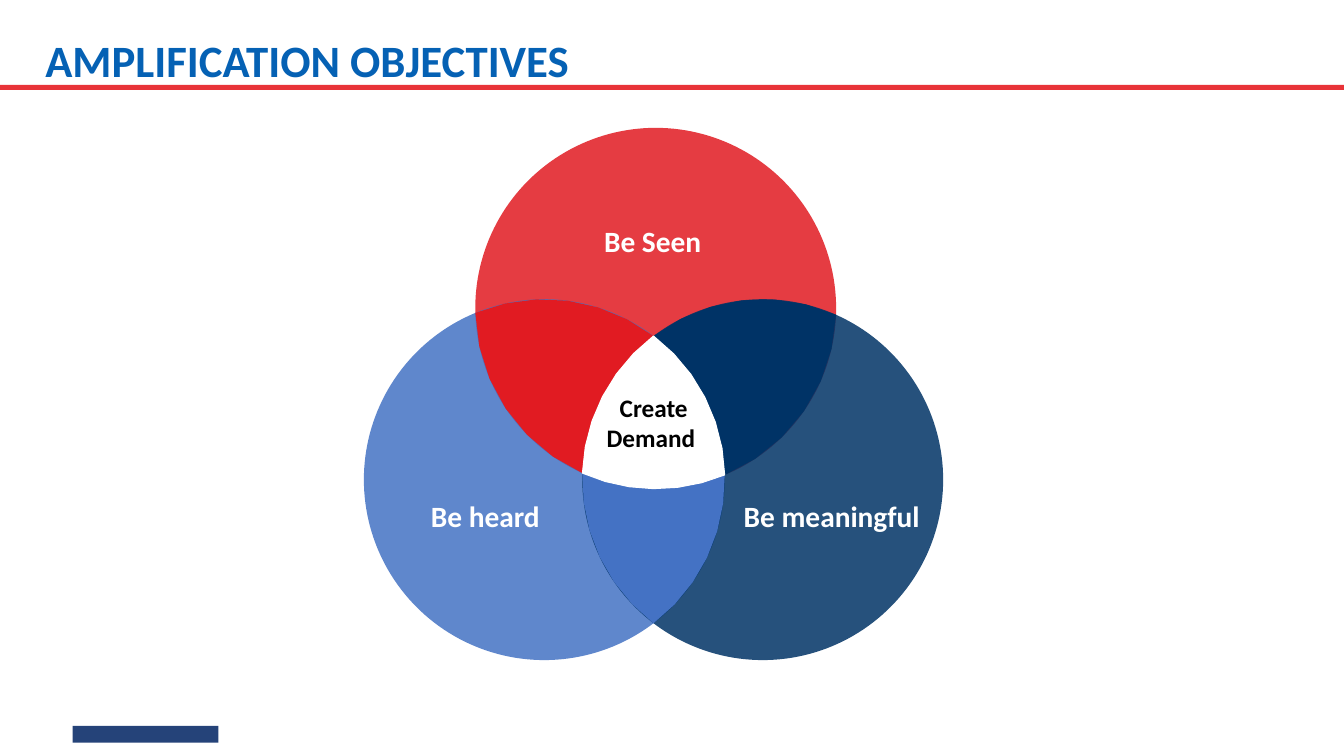
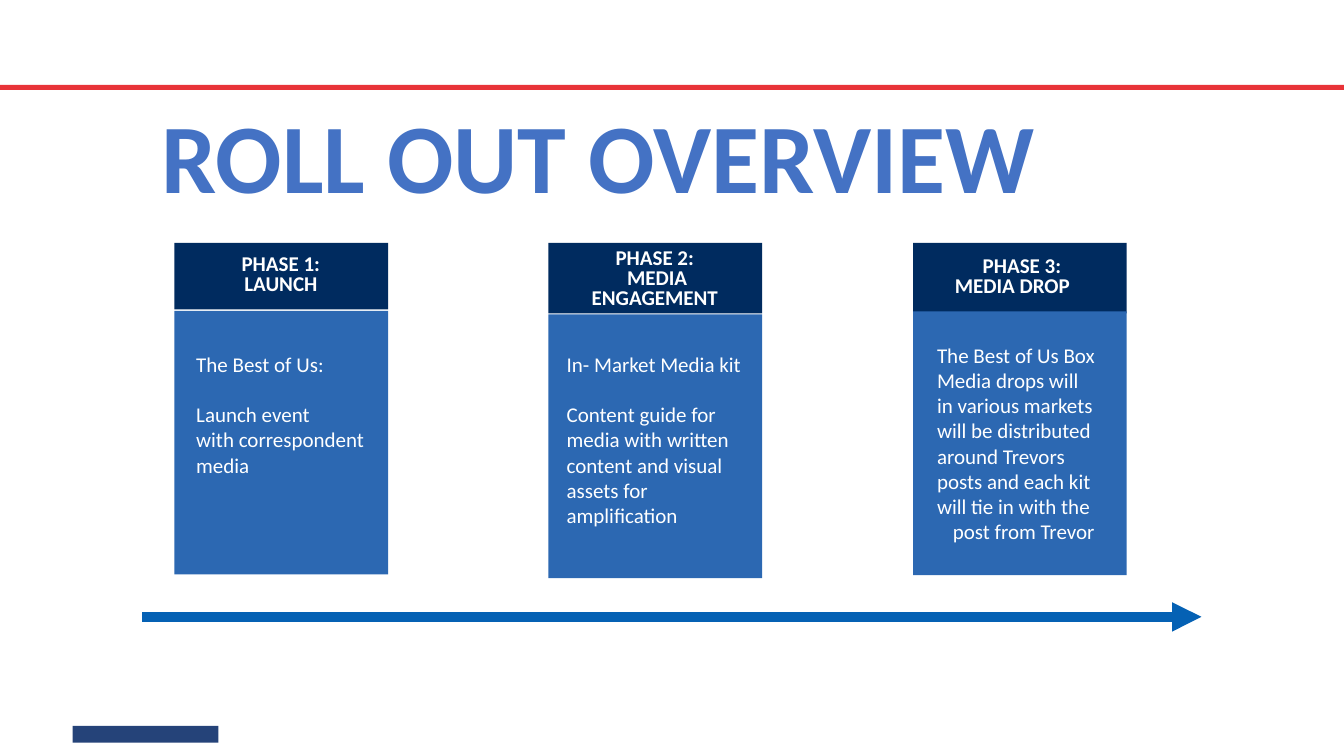
from itertools import combinations
from math import atan2, cos, dist, hypot, pi, sin

from lxml.etree import SubElement
from pptx import Presentation
from pptx.dml.color import RGBColor
from pptx.enum.shapes import MSO_CONNECTOR, MSO_SHAPE
from pptx.enum.text import MSO_ANCHOR, MSO_AUTO_SIZE, PP_ALIGN
from pptx.oxml.ns import qn
from pptx.util import Emu, Pt

# Grid: 160 columns by 90 rows of square cells, 12 to the inch
COLS, ROWS = 160, 90
CELL = 76200

FONT = "Calibri"
WHITE = RGBColor(0xFF, 0xFF, 0xFF)
BLACK = RGBColor(0, 0, 0)
BLUE = RGBColor(0x05, 0x61, 0xB4)
SKY = RGBColor(0x44, 0x72, 0xC4)
RED = RGBColor(0xE1, 0x1B, 0x22)
DEEP = RGBColor(0x00, 0x33, 0x66)
NAVY = RGBColor(0x00, 0x2B, 0x5F)
PANEL = RGBColor(0x2C, 0x68, 0xB2)
BAND = RGBColor(0xE8, 0x33, 0x38)
FOOT = RGBColor(0x25, 0x43, 0x79)

# Three circles of the diagram: centre and colour
RADIUS = 21.48
TOP, LEFT, RIGHT = (78.06, 36.7), (64.8, 57.1), (90.8, 57.1)
RINGS = [(TOP, RED), (LEFT, SKY), (RIGHT, DEEP)]
OVERLAP = {(TOP, LEFT): RED, (TOP, RIGHT): DEEP, (LEFT, RIGHT): SKY}

LABELS = [
    ("Be meaningful", (86.3, 58.8, 25.44, 5.16), 21, WHITE),
    ("Be Seen", (67.8, 26.06, 19.8, 5.16), 21, WHITE),
    ("Be heard", (45.84, 58.8, 23.88, 5.16), 21, WHITE),
    ("Create Demand ", (71.28, 46.2, 13.08, 8.16), 18, BLACK),
]

# Phase cards: left, head height, body top, head text top, head, note box, note.
# A line may carry its own left indent, right indent and space before.
WIDE, CARD_TOP, CARD_H = 25.44, 28.92, 31.4
PHASES = [
    (20.76, 7.92, 37, 30.18, ["PHASE 1: ", "LAUNCH "],
     (23, 41.46, 21.12, 18),
     ["The Best of Us:",
      ("Launch event\vwith correspondent media", {"before": 18})]),
    (65.28, 8.4, 37.44, 29.4, ["PHASE 2: ", "MEDIA\vENGAGEMENT "],
     (67.1, 41.46, 23.28, 26.4),
     ["In- Market Media kit",
      ("Content guide for media with written content and visual assets "
       "for amplification", {"before": 18})]),
    (108.7, 8.4, 37.08, 30.42,
     ["PHASE 3:", ("MEDIA DROP", {"right": 2.28})],
     (111.2, 40.4, 21.12, 21.6),
     ["The Best of Us Box",
      "Media drops will\vin various markets will be distributed around "
      "Trevors posts and each kit will tie in with the",
      ("post from Trevor", {"left": 1.88})]),
]


def grid(*cells):
    return [Emu(round(n * CELL)) for n in cells]


def place(shape, at):
    shape.left, shape.top, shape.width, shape.height = grid(*at)
    return shape


def paint(shape, fill, line=None, alpha=None):
    """Flat fill, with an optional outline and opacity in percent."""
    shape.shadow.inherit = False
    shape.fill.solid()
    shape.fill.fore_color.rgb = fill
    if alpha:
        tint = shape.element.spPr.find(".//" + qn("a:srgbClr"))
        SubElement(tint, qn("a:alpha"), val=str(alpha * 1000))
    if line:
        shape.line.color.rgb = line
        shape.line.width = Pt(0.75)
    else:
        shape.line.fill.background()
    return shape


def block(slide, kind, at, fill, alpha=None):
    return paint(slide.shapes.add_shape(kind, *grid(*at)), fill, alpha=alpha)


def text(shape, lines, size, color=WHITE, bold=False, align=PP_ALIGN.LEFT,
         anchor=MSO_ANCHOR.TOP, inset=0.36, space=1.0):
    """Fill a text box or placeholder with formatted paragraphs."""
    frame = shape.text_frame
    frame.word_wrap = True
    frame.auto_size = MSO_AUTO_SIZE.NONE
    frame.vertical_anchor = anchor
    (frame.margin_left, frame.margin_top,
     frame.margin_right, frame.margin_bottom) = grid(*[inset] * 4)
    for i, line in enumerate(lines):
        words, opts = (line, {}) if isinstance(line, str) else line
        para = frame.paragraphs[0] if i == 0 else frame.add_paragraph()
        para.text = words
        para.alignment = align
        para.line_spacing = space
        para.space_before = Pt(opts.get("before", 0))
        for side, key in (("left", "marL"), ("right", "marR")):
            if side in opts:
                para._p.get_or_add_pPr().set(key, str(grid(opts[side])[0]))
        for run in para.runs:
            font = run.font
            font.name, font.size, font.bold = FONT, Pt(size), bold
            font.color.rgb = color


def label(slide, at, lines, size, **fmt):
    text(slide.shapes.add_textbox(*grid(*at)), lines, size, **fmt)


def title(slide, words, at, size, color, space=1.0):
    text(place(slide.shapes.title, at), [words], size, color=color, bold=True,
         anchor=MSO_ANCHOR.MIDDLE, space=space)


def arrow(slide, x1, x2, y):
    line = slide.shapes.add_connector(
        MSO_CONNECTOR.STRAIGHT, *grid(x1, y, x2, y))
    line.line.color.rgb = BLUE
    line.line.width = Pt(7)
    SubElement(line.line._get_or_add_ln(), qn("a:tailEnd"), type="triangle")
    SubElement(line.element.spPr, qn("a:effectLst"))


def dress(deck, slide):
    """Move the red band and the footer bar to the master."""
    tree = deck.slide_master.shapes.element
    for at, fill in (((8.64, 86.4, 17.36, 2), FOOT),
                     ((0, 10.1, COLS, 0.6), BAND)):
        tree.append(block(slide, MSO_SHAPE.RECTANGLE, at, fill).element)


# Geometry of the overlaps
def cross(a, b, third):
    """Meeting points of two circles: the one nearer the third comes first."""
    dx, dy = b[0] - a[0], b[1] - a[1]
    gap = hypot(dx, dy)
    rise = (RADIUS ** 2 - gap ** 2 / 4) ** 0.5 / gap
    mid = (a[0] + b[0]) / 2, (a[1] + b[1]) / 2
    spots = [(mid[0] - s * rise * dy, mid[1] + s * rise * dx) for s in (1, -1)]
    return sorted(spots, key=lambda spot: dist(spot, third))


def arc(mid, start, end, steps=6):
    """Points on the shorter arc from start up to, but without, end."""
    first, last = (atan2(p[1] - mid[1], p[0] - mid[0]) for p in (start, end))
    turn = (last - first + pi) % (2 * pi) - pi
    for i in range(steps):
        angle = first + turn * i / steps
        yield mid[0] + RADIUS * cos(angle), mid[1] + RADIUS * sin(angle)


def region(slide, spots, mids, fill, line=None):
    """Closed outline of arcs through the spots, one centre for each arc."""
    ends = spots[1:] + spots[:1]
    points = [grid(*p) for m, s, e in zip(mids, spots, ends)
              for p in arc(m, s, e)]
    pen = slide.shapes.build_freeform(*points[0])
    pen.add_line_segments(points[1:], close=True)
    paint(pen.convert_to_shape(), fill, line)


def venn(slide):
    for (x, y), fill in RINGS:
        block(slide, MSO_SHAPE.OVAL,
              (x - RADIUS, y - RADIUS, 2 * RADIUS, 2 * RADIUS), fill, alpha=85)
    mids = [mid for mid, _ in RINGS]
    inner = {}
    outer = {}
    for a, b in combinations(mids, 2):
        third = next(m for m in mids if m not in (a, b))
        key = frozenset((a, b))
        inner[key], outer[key] = cross(a, b, third)
    for (a, b), fill in OVERLAP.items():
        c = next(m for m in mids if m not in (a, b))
        spots = [outer[frozenset((a, b))], inner[frozenset((b, c))],
                 inner[frozenset((a, c))]]
        region(slide, spots, [b, c, a], fill)
    core = [inner[frozenset(p)]
            for p in ((TOP, LEFT), (TOP, RIGHT), (LEFT, RIGHT))]
    region(slide, core, [TOP, RIGHT, LEFT], WHITE, line=WHITE)


def goals(slide):
    title(slide, "AMPLIFICATION OBJECTIVES", (5.04, 3.6, 75.6, 7.08), 32, BLUE)
    venn(slide)
    for words, at, size, color in LABELS:
        label(slide, at, [words], size, color=color, bold=True,
              align=PP_ALIGN.CENTER, inset=0.48)


def phases(slide):
    title(slide, "ROLL OUT OVERVIEW", (18.84, 14.16, 123.84, 11.04), 70.2,
          SKY, space=0.8)
    body = slide.placeholders[1]
    for i, (x, high, low, head_y, head, spot, note) in enumerate(PHASES):
        block(slide, MSO_SHAPE.RECTANGLE, (x, CARD_TOP, WIDE, high), NAVY)
        block(slide, MSO_SHAPE.RECTANGLE, (x, low, WIDE, CARD_H), PANEL)
        label(slide, (x + 1.32, head_y, 23.28, high - 0.48), head, 15,
              bold=True, align=PP_ALIGN.CENTER, inset=0.24, space=0.8)
        if i == 0:
            # The first note is the subtitle, raised above its card
            slide.shapes.element.append(body.element)
            text(place(body, spot), note, 15)
        else:
            label(slide, spot, note, 15)
    arrow(slide, 16.92, 143.04, 73.44)


def main():
    deck = Presentation()
    deck.slide_width, deck.slide_height = grid(COLS, ROWS)
    first = deck.slides.add_slide(deck.slide_layouts[5])
    dress(deck, first)
    goals(first)
    phases(deck.slides.add_slide(deck.slide_layouts[0]))
    deck.save("out.pptx")


if __name__ == "__main__":
    main()
